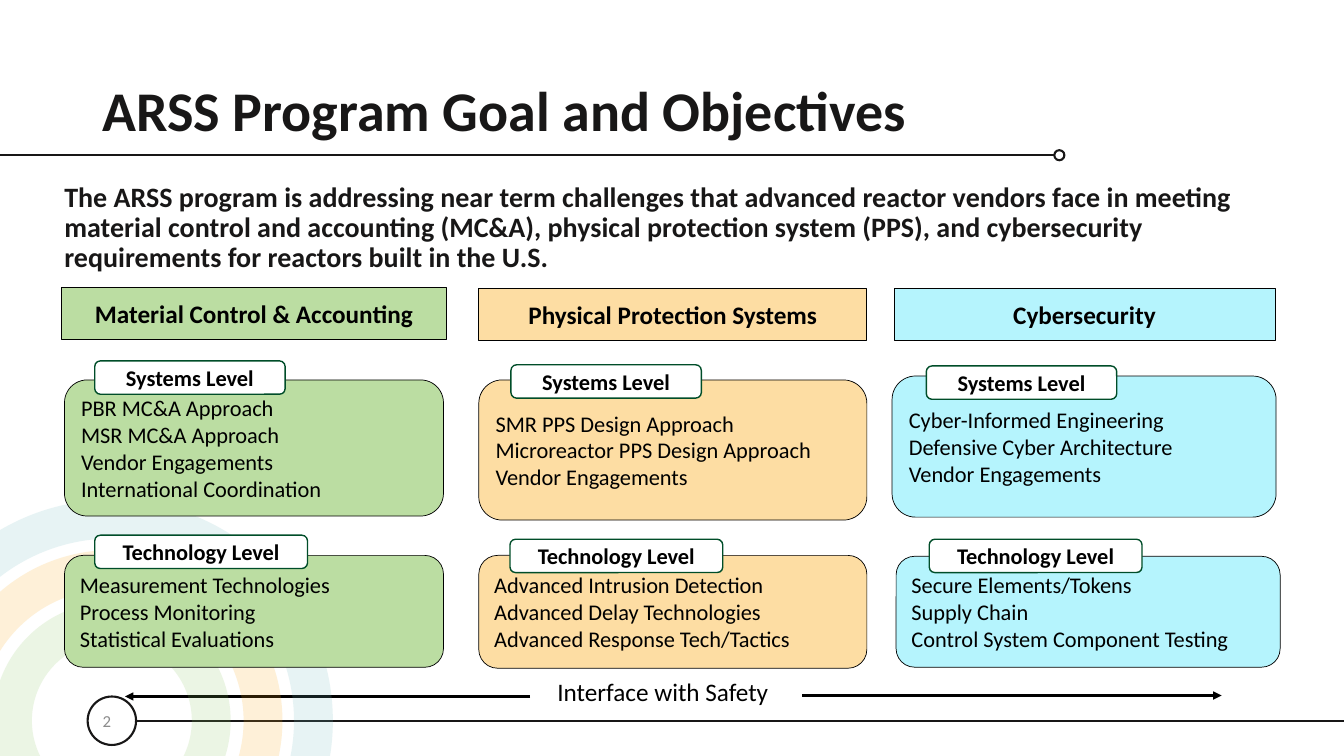
"""Build the ARSS program goal and objectives slide."""
from dataclasses import dataclass
from lxml import etree
from pptx import Presentation
from pptx import util as u
from pptx.dml import color
from pptx.enum import shapes, text
from pptx.oxml import ns


@dataclass(frozen=True)
class Theme:
    font: str = "Calibri"
    ink: str = "181717"
    black: str = "000000"
    white: str = "FFFFFF"
    grey: str = "8C8C8C"
    tag_line: str = "004D29"
    green: str = "BBDDA2"
    orange: str = "FDDDA3"
    blue: str = "B5F4FD"
    rings: tuple = (("FBA919", 216), ("8DC664", 142), ("71BAC0", 288))
    ring_alpha: str = "16000"
    title: int = 40
    goal: int = 20
    heading: int = 18
    body: int = 16
    number: int = 12


theme = Theme()
Kind = shapes.MSO_SHAPE
Anchor = text.MSO_ANCHOR
Align = text.PP_ALIGN

presentation = Presentation()
presentation.slide_width, presentation.slide_height = u.Pt(960), u.Pt(540)
slide = presentation.slides.add_slide(presentation.slide_layouts[6])


def add_box(kind, place, fill, line, weight):
    shape = slide.shapes.add_shape(kind, *map(u.Pt, place))
    shape.shadow.inherit = False
    if fill:
        shape.fill.solid()
        shape.fill.fore_color.rgb = color.RGBColor.from_string(fill)
    else:
        shape.fill.background()
    shape.line.color.rgb = color.RGBColor.from_string(line)
    shape.line.width = u.Pt(weight)
    return shape


def write(shape, lines, size, ink=theme.black, bold=False, align=Align.LEFT,
          anchor=Anchor.MIDDLE, spacing=1.0, wrap=True):
    frame = shape.text_frame
    frame.word_wrap, frame.vertical_anchor = wrap, anchor
    frame.text = "\n".join(lines)
    for paragraph in frame.paragraphs:
        paragraph.alignment, paragraph.line_spacing = align, spacing
        paragraph.font.color.rgb = color.RGBColor.from_string(ink)
        for name, value in {"name": theme.font, "size": u.Pt(size), "bold": bold}.items():
            setattr(paragraph.font, name, value)


add_box(Kind.OVAL, (62.6, 497.5, 34.6, 34.6), theme.white, theme.ink, 1.5)

lines = [
    ((0, 110.9, 753.1, 110.9), theme.ink, 1.5, False),
    ((96.8, 514.8, 960, 514.8), theme.ink, 1.5, False),
    ((378.7, 497.5, 89.3, 497.5), theme.black, 2, True),
    ((573.1, 496.8, 872.6, 496.8), theme.black, 2, True),
]
for ends, ink, weight, arrow in lines:
    connector = slide.shapes.add_connector(shapes.MSO_CONNECTOR.STRAIGHT, *map(u.Pt, ends))
    connector.line.color.rgb = color.RGBColor.from_string(ink)
    connector.line.width = u.Pt(weight)
    if arrow:
        etree.SubElement(connector.line._get_or_add_ln(), ns.qn("a:tailEnd"), type="triangle")
    etree.SubElement(connector._element.spPr, ns.qn("a:effectLst"))

add_box(Kind.OVAL, (753.1, 107.3, 7.2, 7.2), theme.white, theme.ink, 1.5)

for ring_color, diameter in theme.rings:
    place = (79.9 - diameter / 2, 514.8 - diameter / 2, diameter, diameter)
    ring = add_box(Kind.OVAL, place, None, ring_color, 27.75)
    tint = ring.line._get_or_add_ln().find(".//" + ns.qn("a:srgbClr"))
    etree.SubElement(tint, ns.qn("a:alpha"), val=theme.ring_alpha)

columns = [
    (theme.green, "Material Control & Accounting", (43.9, 205.2, 275, 37.4), [
        ("Systems Level", (67.7, 257.8, 136, 23.8), (46.1, 271.4, 270.7, 97.2),
         ["PBR MC&A Approach", "MSR MC&A Approach", "Vendor Engagements",
          "International Coordination"]),
        ("Technology Level", (67.7, 382.3, 152, 23.8), (46.1, 396.7, 270.7, 79.9),
         ["Measurement Technologies", "Process Monitoring", "Statistical Evaluations"]),
    ]),
    (theme.orange, "Physical Protection Systems", (342, 205.9, 277.2, 37.4), [
        ("Systems Level", (365, 260.6, 136, 23.8), (342, 271.4, 277.2, 100.1),
         ["SMR PPS Design Approach", "Microreactor PPS Design Approach",
          "Vendor Engagements"]),
        ("Technology Level", (364.3, 385.2, 152, 23.8), (342, 396.7, 277.2, 80.6),
         ["Advanced Intrusion Detection", "Advanced Delay Technologies",
          "Advanced Response Tech/Tactics"]),
    ]),
    (theme.blue, "Cybersecurity", (638.6, 205.9, 272.2, 37.4), [
        ("Systems Level", (661.7, 261.4, 136, 23.8), (637.2, 268.6, 274.3, 100.8),
         ["Cyber-Informed Engineering", "Defensive Cyber Architecture",
          "Vendor Engagements"]),
        ("Technology Level", (663.8, 385.2, 152, 23.8), (640.1, 397.4, 274.3, 79.2),
         ["Secure Elements/Tokens", "Supply Chain", "Control System Component Testing"]),
    ]),
]
for fill, heading, heading_place, levels in columns:
    header = add_box(Kind.RECTANGLE, heading_place, fill, theme.black, 0.5)
    write(header, [heading], theme.heading, bold=True, align=Align.CENTER)
    for level, tag_place, panel_place, topics in levels:
        panel = add_box(Kind.ROUNDED_RECTANGLE, panel_place, fill, theme.black, 0.5)
        write(panel, topics, theme.body)
        tag = add_box(Kind.ROUNDED_RECTANGLE, tag_place, theme.white, theme.tag_line, 1)
        write(tag, [level], theme.body, bold=True, align=Align.CENTER)

goal = ("The ARSS program is addressing near term challenges that advanced reactor vendors "
        "face in meeting material control and accounting (MC&A), physical protection system "
        "(PPS), and cybersecurity requirements for reactors built in the U.S.")
captions = [
    ((66.2, 28.8, 828, 104.4), "ARSS Program Goal and Objectives",
     {"size": theme.title, "ink": theme.ink, "bold": True, "spacing": 0.9}),
    ((38.9, 127.4, 880.6, 74.9), goal,
     {"size": theme.goal, "ink": theme.ink, "bold": True, "spacing": 0.9,
      "anchor": Anchor.TOP}),
    ((391, 479.5, 179.3, 28.8), "Interface with Safety",
     {"size": theme.heading, "anchor": Anchor.TOP, "wrap": False}),
    ((66.2, 500.4, 216, 28.8), "2", {"size": theme.number, "ink": theme.grey}),
]
for place, caption, formats in captions:
    write(slide.shapes.add_textbox(*map(u.Pt, place)), [caption], **formats)

presentation.save("out.pptx")
